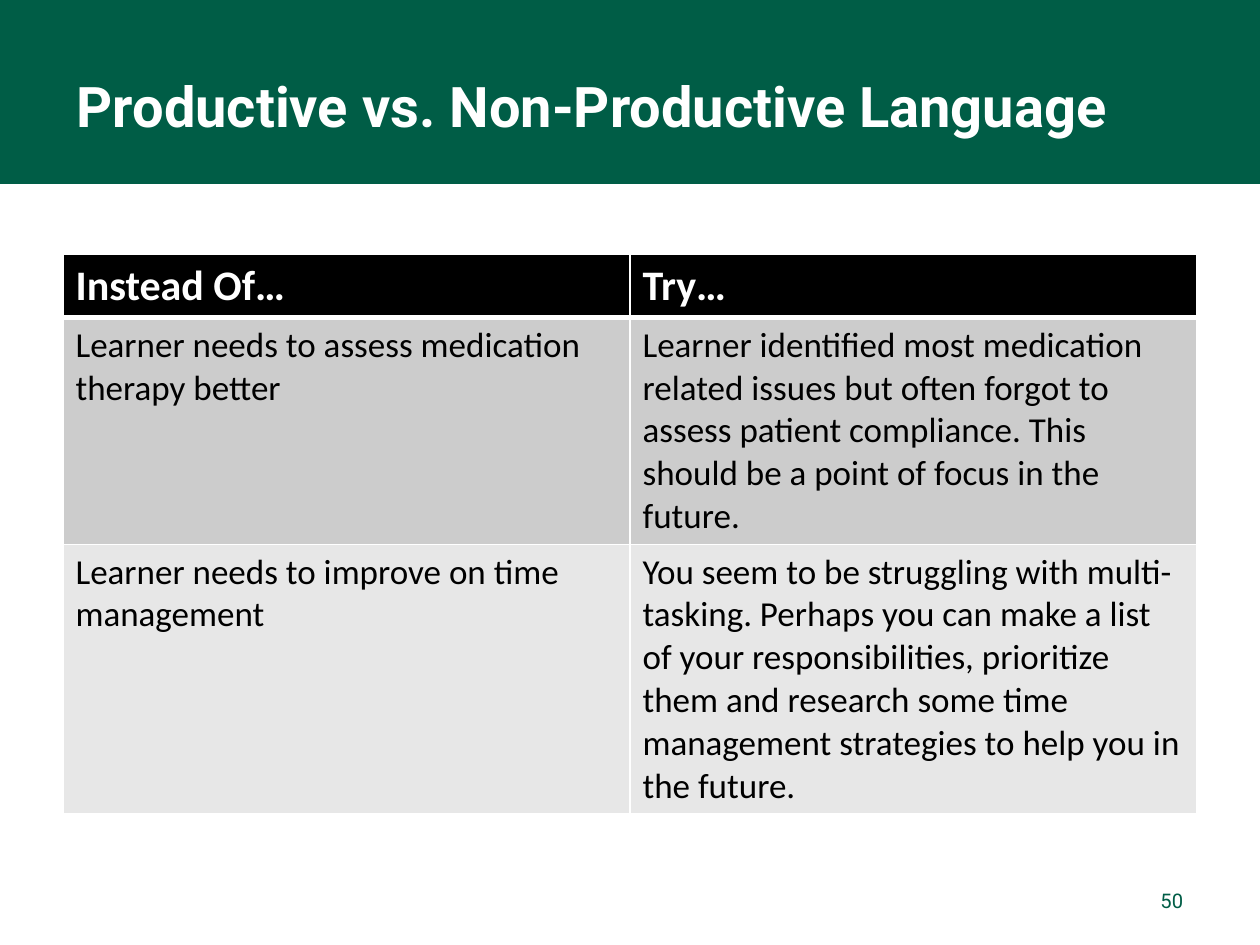
from pptx import Presentation
from pptx.dml.color import RGBColor
from pptx.enum.shapes import MSO_SHAPE
from pptx.enum.text import MSO_ANCHOR, PP_ALIGN
from pptx.oxml import parse_xml
from pptx.oxml.ns import nsdecls
from pptx.util import Inches, Pt

GREEN, WHITE, BLACK = "005D46", "FFFFFF", "000000"
ROWS = [
    ("Instead Of…", "Try…"),
    ("Learner needs to assess medication therapy better",
     "Learner identified most medication related issues but often forgot to "
     "assess patient compliance. This should be a point of focus in the future."),
    ("Learner needs to improve on time management",
     "You seem to be struggling with multi-tasking. Perhaps you can make a list "
     "of your responsibilities, prioritize them and research some time "
     "management strategies to help you in the future."),
]
ROW_HEIGHTS = [0.5, 1.8, 2.14]
ROW_FILLS = [BLACK, "CCCCCC", "E7E7E7"]


def rgb(color):
    return RGBColor.from_string(color)


def style_text(tf, font, size, color, bold=False):
    for r in tf.paragraphs[0].runs:
        r.font.name = font
        r.font.size = Pt(size)
        r.font.bold = bold
        r.font.color.rgb = rgb(color)


def add_band(s):
    sp = s.shapes.add_shape(MSO_SHAPE.RECTANGLE, 0, 0, Inches(10), Inches(1.46))
    sp.shadow.inherit = False
    sp.fill.solid()
    sp.fill.fore_color.rgb = rgb(GREEN)
    sp.line.fill.background()


def add_text(s, text, box, size, color, bold=False, align=PP_ALIGN.LEFT):
    tf = s.shapes.add_textbox(*map(Inches, box)).text_frame
    tf.word_wrap = True
    tf.vertical_anchor = MSO_ANCHOR.MIDDLE
    tf.margin_left = tf.margin_right = Inches(0.11)
    tf.margin_top = tf.margin_bottom = Inches(0.06)
    tf.text = text
    tf.paragraphs[0].alignment = align
    style_text(tf, "Roboto", size, color, bold)


def set_borders(cell, top, bottom):
    tcPr = cell._tc.get_or_add_tcPr()
    widths = {"lnL": 1, "lnR": 1, "lnT": top, "lnB": bottom}
    for i, (tag, width) in enumerate(widths.items()):
        tcPr.insert(i, parse_xml(
            f'<a:{tag} {nsdecls("a")} w="{Pt(width)}"><a:solidFill>'
            f'<a:srgbClr val="{WHITE}"/></a:solidFill></a:{tag}>'))


def add_language_table(s):
    frame = s.shapes.add_table(len(ROWS), 2, Inches(0.5), Inches(2.02),
                               Inches(9), Inches(sum(ROW_HEIGHTS)))
    table = frame.table
    for i, texts in enumerate(ROWS):
        header = i == 0
        table.rows[i].height = Inches(ROW_HEIGHTS[i])
        for j, text in enumerate(texts):
            cell = table.cell(i, j)
            cell.text_frame.text = text
            cell.fill.solid()
            cell.fill.fore_color.rgb = rgb(ROW_FILLS[i])
            style_text(cell.text_frame, "Calibri", 24 if header else 20,
                       WHITE if header else BLACK, header)
            set_borders(cell, 3 if i == 1 else 1, 3 if header else 1)


def main():
    prs = Presentation()
    prs.slide_width, prs.slide_height = Inches(10), Inches(7.5)
    s = prs.slides.add_slide(prs.slide_layouts[6])
    add_band(s)
    add_text(s, "Productive vs. Non-Productive Language",
             (0.5, 0.21, 9, 1.25), 32, WHITE, bold=True)
    add_language_table(s)
    add_text(s, "50", (7.17, 6.95, 2.33, 0.4), 11.5, GREEN, align=PP_ALIGN.RIGHT)
    prs.save("out.pptx")


if __name__ == "__main__":
    main()
